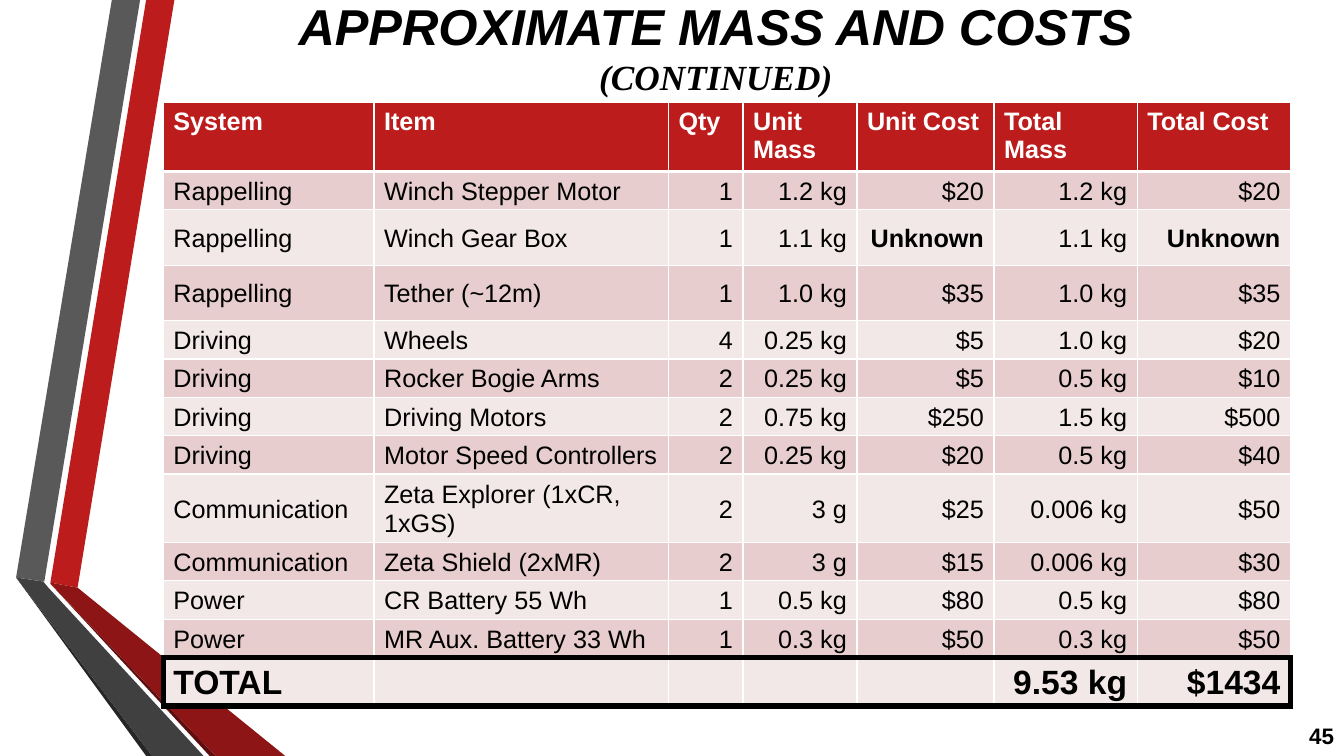
from dataclasses import dataclass

from lxml import etree
from pptx import Presentation
from pptx.dml.color import RGBColor
from pptx.enum.text import MSO_ANCHOR, PP_ALIGN
from pptx.oxml.ns import qn
from pptx.util import Inches, Pt

LEFT, CENTER, RIGHT = PP_ALIGN.LEFT, PP_ALIGN.CENTER, PP_ALIGN.RIGHT
TOP, MIDDLE = MSO_ANCHOR.TOP, MSO_ANCHOR.MIDDLE


@dataclass(frozen=True)
class Theme:
    sans: str = "Arial"
    serif: str = "Times New Roman"
    ink: str = "000000"
    white: str = "FFFFFF"
    red: str = "BC1C1C"
    dark_red: str = "8D1515"
    deep_red: str = "5E0E0E"
    gray: str = "595959"
    dark_gray: str = "404040"
    deep_gray: str = "262626"
    band: str = "E7CDCD"
    pale: str = "F3E8E8"
    title: float = 36
    sub: float = 25.2
    body: float = 18
    total: float = 24
    page: float = 16
    thin: float = 1
    rule: float = 3
    frame: float = 4.5


THEME = Theme()

# Ribbon outlines: colour and corner points in hundredths of an inch, back to front
RIBBONS = [
    (THEME.red, [(50, 578), (77, 583), (173, 0), (145, 0)]),
    (THEME.gray, [(139, 0), (111, 0), (16, 573), (44, 577)]),
    (THEME.deep_gray, [(16, 573), (145, 750), (151, 750)]),
    (THEME.deep_red, [(50, 579), (208, 750), (214, 750)]),
    (THEME.dark_red, [(50, 579), (214, 750), (283, 750), (77, 583), (50, 578)]),
    (THEME.dark_gray, [(202, 750), (48, 583), (43, 577), (16, 573), (151, 750)]),
]

COLS = [2.09, 2.92, 0.74, 1.13, 1.36, 1.42, 1.52]
ROW = 0.38
TALL = {0: 0.67, 2: 0.55, 3: 0.55, 8: 0.67, 12: 0.46}

ROWS = [
    ["System", "Item", "Qty", "Unit Mass", "Unit Cost", "Total Mass", "Total Cost"],
    ["Rappelling", "Winch Stepper Motor", "1", "1.2 kg", "$20", "1.2 kg", "$20"],
    ["Rappelling", "Winch Gear Box", "1", "1.1 kg", "Unknown", "1.1 kg", "Unknown"],
    ["Rappelling", "Tether (~12m)", "1", "1.0 kg", "$35", "1.0 kg", "$35"],
    ["Driving", "Wheels", "4", "0.25 kg", "$5", "1.0 kg", "$20"],
    ["Driving", "Rocker Bogie Arms", "2", "0.25 kg", "$5", "0.5 kg", "$10"],
    ["Driving", "Driving Motors", "2", "0.75 kg", "$250", "1.5 kg", "$500"],
    ["Driving", "Motor Speed Controllers", "2", "0.25 kg", "$20", "0.5 kg", "$40"],
    ["Communication", "Zeta Explorer (1xCR, 1xGS)", "2", "3 g", "$25", "0.006 kg", "$50"],
    ["Communication", "Zeta Shield (2xMR)", "2", "3 g", "$15", "0.006 kg", "$30"],
    ["Power", "CR Battery 55 Wh", "1", "0.5 kg", "$80", "0.5 kg", "$80"],
    ["Power", "MR Aux. Battery 33 Wh", "1", "0.3 kg", "$50", "0.3 kg", "$50"],
    ["TOTAL", "", "", "", "", "9.53 kg", "$1434"],
]


def style(run, size, color=THEME.ink, face=THEME.sans, bold=True, italic=False):
    font = run.font
    font.name, font.size = face, Pt(size)
    font.bold, font.italic = bold, italic
    font.color.rgb = RGBColor.from_string(color)


def add_ribbon(slide, color, points):
    pen = slide.shapes.build_freeform(*points[0], scale=Inches(0.01))
    pen.add_line_segments(points[1:], close=True)
    shape = pen.convert_to_shape()
    shape.shadow.inherit = False
    shape.fill.solid()
    shape.fill.fore_color.rgb = RGBColor.from_string(color)
    shape.line.fill.background()


def add_text(slide, text, left, top, width, height, align):
    box = slide.shapes.add_textbox(Inches(left), Inches(top), Inches(width), Inches(height))
    frame = box.text_frame
    frame.word_wrap = True
    frame.vertical_anchor = MIDDLE
    para = frame.paragraphs[0]
    para.text = text
    para.alignment = align
    return para.runs


def add_edge(cell, side, color, width):
    edge = etree.SubElement(cell._tc.get_or_add_tcPr(), qn(f"a:ln{side}"), w=str(Pt(width)))
    fill = etree.SubElement(edge, qn("a:solidFill"))
    etree.SubElement(fill, qn("a:srgbClr"), val=color)


def edges(row, col):
    """Border of each side, in the order the file format asks for."""
    last, end = len(ROWS) - 1, len(COLS) - 1
    thin = (THEME.white, THEME.thin)
    rule = (THEME.white, THEME.rule)
    frame = (THEME.ink, THEME.frame)
    return {
        "L": frame if row == last and col == 0 else thin,
        "R": frame if row == last and col == end else thin,
        "T": frame if row == last else rule if row == 1 else thin,
        "B": frame if row >= last - 1 else rule if row == 0 else thin,
    }


def fill_cell(cell, text, row, col):
    head, total = row == 0, row == len(ROWS) - 1
    for side, (color, width) in edges(row, col).items():
        add_edge(cell, side, color, width)
    cell.fill.solid()
    shade = THEME.red if head else THEME.band if row % 2 else THEME.pale
    cell.fill.fore_color.rgb = RGBColor.from_string(shade)
    cell.vertical_anchor = TOP if head else MIDDLE
    cell.margin_top, cell.margin_bottom = Inches(0.05), Inches(0.03)
    para = cell.text_frame.paragraphs[0]
    para.text = text
    para.alignment = LEFT if head or col < 2 else RIGHT
    for run in para.runs:
        style(run, THEME.total if total else THEME.body,
              THEME.white if head else THEME.ink,
              bold=head or total or text == "Unknown")


def add_costs(slide, left, top):
    heights = [TALL.get(i, ROW) for i in range(len(ROWS))]
    table = slide.shapes.add_table(
        len(ROWS), len(COLS), Inches(left), Inches(top),
        Inches(sum(COLS)), Inches(sum(heights))).table
    table.first_row = table.horz_banding = False
    for col, width in zip(table.columns, COLS):
        col.width = Inches(width)
    for row, height in zip(table.rows, heights):
        row.height = Inches(height)
    for r, line in enumerate(ROWS):
        for c, text in enumerate(line):
            fill_cell(table.cell(r, c), text, r, c)


def main():
    deck = Presentation()
    deck.slide_width, deck.slide_height = Inches(13.33), Inches(7.5)
    slide = deck.slides.add_slide(deck.slide_layouts[6])

    # Side ribbons
    for color, points in RIBBONS:
        add_ribbon(slide, color, points)

    # Title
    title, sub = add_text(slide, "APPROXIMATE MASS AND COSTS\v(CONTINUED)",
                          1.62, 0.02, 10.96, 0.88, CENTER)
    style(title, THEME.title, italic=True)
    style(sub, THEME.sub, face=THEME.serif, italic=True)

    # Mass and cost table
    add_costs(slide, 1.62, 1.02)

    # Page number
    page, = add_text(slide, "45", 12.73, 7.1, 0.6, 0.4, RIGHT)
    style(page, THEME.page)

    deck.save("out.pptx")


if __name__ == "__main__":
    main()
